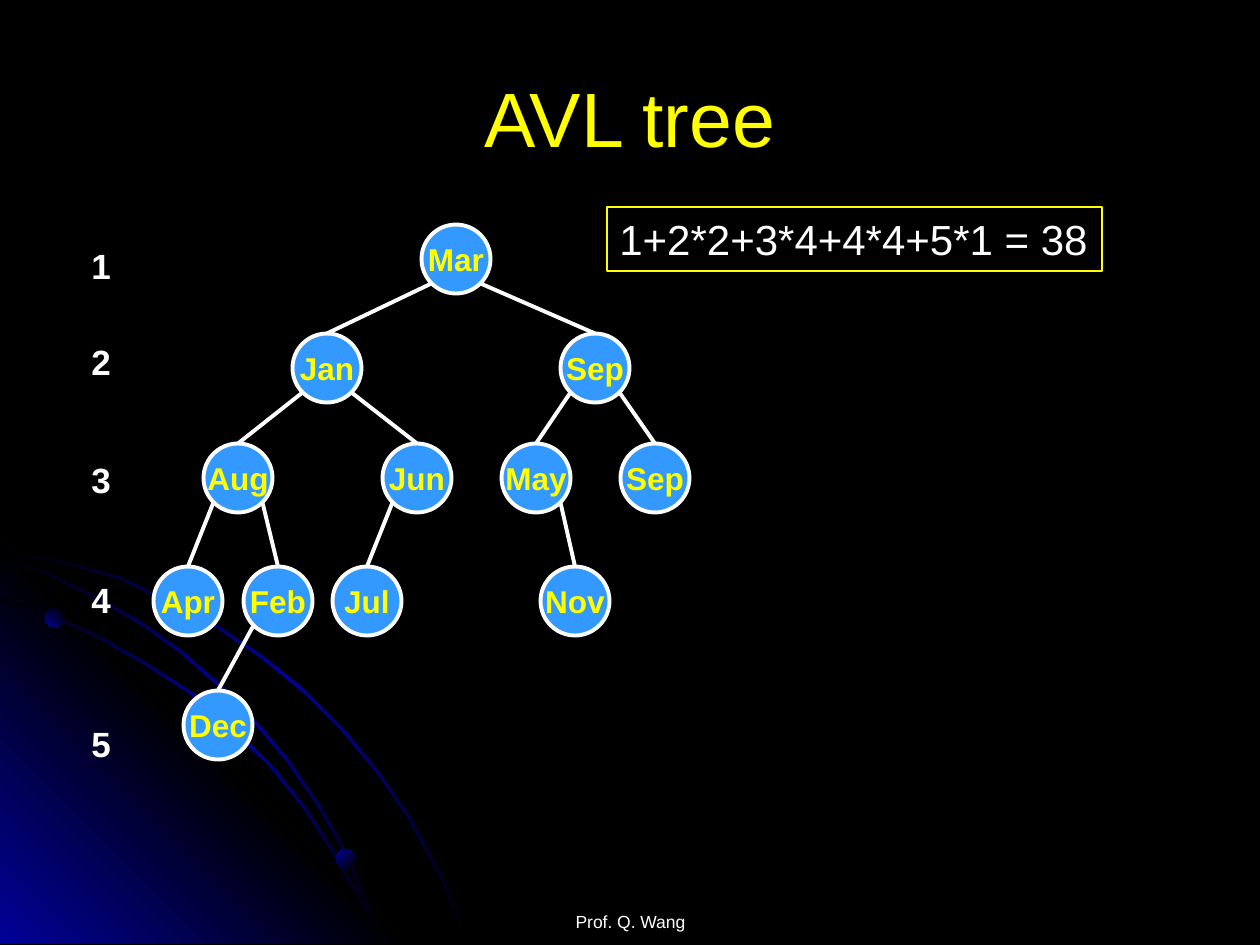
from copy import deepcopy

from pptx import Presentation
from pptx import util as u
from pptx.dml.color import RGBColor
from pptx.enum import shapes, text
from pptx.oxml import parse_xml
from pptx.oxml.ns import nsdecls, qn

SCALE = u.Inches(1) / 126
WIDTH, HEIGHT, BOTTOM = 1260, 945, 944
BLACK, BLUE, WHITE, YELLOW, SKY = "000000", "010199", "FFFFFF", "FFFF00", "3399FF"
DIAMETER = 69
LEVEL_CENTRES = [259, 368, 478, 601, 725]
LEVEL_LABEL_TOPS = [238, 334, 452, 572, 716]

OUTER_ARC = [(0, 548), (35, 556), (72, 563), (123, 578), (171, 601), (219, 626), (263, 656),
             (305, 690), (343, 728), (378, 770), (410, 816), (427, 848), (444, 879),
             (456, 911), (469, 944)]
INNER_ARC = [(0, 598), (52, 615), (100, 636), (147, 663), (192, 692), (232, 726), (271, 764),
             (305, 806), (335, 852), (360, 897), (373, 920), (382, 944)]
MIDDLE_ARC = [(0, 557), (49, 573), (96, 596), (140, 621), (181, 650), (220, 684), (257, 722),
              (289, 760), (320, 805), (339, 838), (355, 873), (370, 907), (382, 944)]
GLOW = [(0, 538), (406, BOTTOM), (0, BOTTOM)]

MONTHS = ("Mar", 456,
          ("Jan", 327,
           ("Aug", 238,
            ("Apr", 188, None, None),
            ("Feb", 278, ("Dec", 218, None, None), None)),
           ("Jun", 417, ("Jul", 367, None, None), None)),
          ("Sep", 595,
           ("May", 536, None, ("Nov", 575, None, None)),
           ("Sep", 655, None, None)))


def px(*lengths):
    """Turn pixel lengths into EMU."""
    return [u.Emu(round(length * SCALE)) for length in lengths]


def rgb(code):
    """Return the colour for a hex string."""
    return RGBColor.from_string(code)


def write(shape, words, size, colour, bold=False, align=text.PP_ALIGN.LEFT,
          anchor=text.MSO_ANCHOR.TOP, wrap=False):
    """Put one formatted line of text in a shape."""
    frame = shape.text_frame
    frame.text = words
    frame.word_wrap = wrap
    frame.vertical_anchor = anchor
    paragraph = frame.paragraphs[0]
    paragraph.alignment = align
    font = paragraph.runs[0].font
    font.name, font.size, font.bold = "Arial", u.Pt(size), bold
    font.color.rgb = rgb(colour)


def add_label(slide, box, words, size, colour, **style):
    """Add a text box."""
    label = slide.shapes.add_textbox(*px(*box))
    write(label, words, size, colour, **style)
    return label


def shade(shape, colours, angle):
    """Fill a shape with an even gradient and no outline."""
    shape.shadow.inherit = False
    shape.line.fill.background()
    shape.fill.gradient()
    shape.fill.gradient_angle = angle
    stop_list = shape._element.spPr.find(".//" + qn("a:gsLst"))
    for _ in colours[2:]:
        stop_list.append(deepcopy(stop_list[-1]))
    for index, (stop, colour) in enumerate(zip(shape.fill.gradient_stops, colours)):
        stop.position = index / (len(colours) - 1)
        stop.color.rgb = rgb(colour)


def add_outline(slide, points, colours, angle):
    """Add a shaded closed polygon."""
    builder = slide.shapes.build_freeform(*points[0], scale=SCALE)
    builder.add_line_segments(points[1:], close=True)
    shade(builder.convert_to_shape(), colours, angle)


def add_arc(slide, upper_edge):
    """Add a thin orbit below its upper edge."""
    lower_edge = [(max(0, x - 2), min(BOTTOM, y + 2)) for x, y in reversed(upper_edge)]
    add_outline(slide, upper_edge + lower_edge, [BLACK, BLUE, BLACK], 315)


def add_dot(slide, left, top, size, angle):
    """Add a small planet on an orbit."""
    dot = slide.shapes.add_shape(shapes.MSO_SHAPE.OVAL, *px(left, top, size, size))
    shade(dot, [BLUE, BLACK], angle)


def add_backdrop(slide):
    """Add the black ground with its corner glow and orbits."""
    slide.background.fill.solid()
    slide.background.fill.fore_color.rgb = rgb(BLACK)
    add_arc(slide, OUTER_ARC)
    add_outline(slide, GLOW, [BLUE, BLACK, BLUE], 45)
    add_arc(slide, INNER_ARC)
    add_arc(slide, MIDDLE_ARC)
    add_dot(slide, 45, 609, 19, 45)
    add_dot(slide, 336, 849, 20, 315)


def add_node(slide, month, x, y):
    """Add a tree node centred on a point."""
    corner = DIAMETER / 2
    node = slide.shapes.add_shape(shapes.MSO_SHAPE.OVAL,
                                  *px(x - corner, y - corner, DIAMETER, DIAMETER))
    node.shadow.inherit = False
    node.fill.solid()
    node.fill.fore_color.rgb = rgb(SKY)
    node.line.color.rgb = rgb(WHITE)
    node.line.width = u.Pt(2.25)
    write(node, month, 18, YELLOW, bold=True, align=text.PP_ALIGN.CENTER,
          anchor=text.MSO_ANCHOR.MIDDLE)
    return node


def add_branch(slide, x, y, child):
    """Add a line from a point to the top of a child node."""
    branch = slide.shapes.add_connector(shapes.MSO_CONNECTOR.STRAIGHT, *px(x, y, x, y))
    branch.end_connect(child, 0)
    branch.line.color.rgb = rgb(WHITE)
    branch.line.width = u.Pt(2.25)
    branch._element.spPr.append(parse_xml(f"<a:effectLst {nsdecls('a')}/>"))


def add_tree(slide, tree, level=0):
    """Add a node with its subtrees and return the node."""
    month, x, *children = tree
    y = LEVEL_CENTRES[level]
    node = add_node(slide, month, x, y)
    reach = DIAMETER / 2 * 0.71
    for side, child in zip((-1, 1), children):
        if child:
            add_branch(slide, x + side * reach, y + reach, add_tree(slide, child, level + 1))
    return node


def add_equation(slide):
    """Add the framed sum of comparisons."""
    equation = add_label(slide, (607, 207, 495, 64), "1+2*2+3*4+4*4+5*1 = 38", 24, WHITE)
    equation.line.color.rgb = rgb(YELLOW)
    equation.line.width = u.Pt(0.75)


def main():
    """Build and save the slide."""
    deck = Presentation()
    deck.slide_width, deck.slide_height = px(WIDTH, HEIGHT)
    slide = deck.slides.add_slide(deck.slide_layouts[6])
    add_backdrop(slide)
    footer = add_label(slide, (431, 869, 399, 63), "Prof. Q. Wang", 10, WHITE, wrap=True,
                       align=text.PP_ALIGN.CENTER, anchor=text.MSO_ANCHOR.BOTTOM)
    footer.text_frame.margin_bottom = 0
    add_tree(slide, MONTHS)
    for level, top in enumerate(LEVEL_LABEL_TOPS, 1):
        add_label(slide, (79, top, 45, 54), str(level), 20, WHITE, bold=True)
    add_equation(slide)
    add_label(slide, (63, 38, 1134, 157), "AVL tree", 44, YELLOW, wrap=True,
              align=text.PP_ALIGN.CENTER, anchor=text.MSO_ANCHOR.MIDDLE)
    deck.save("out.pptx")


if __name__ == "__main__":
    main()
